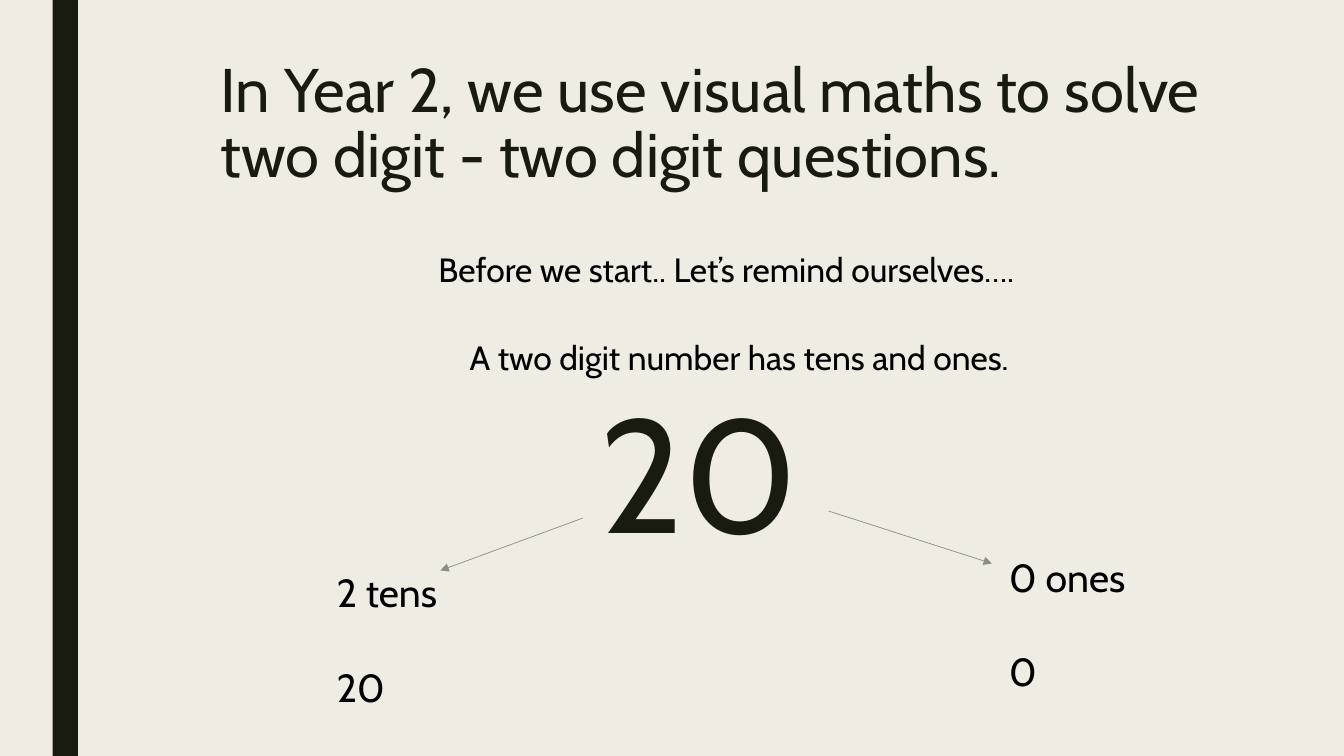
import pptx
import pptx.dml.color
import pptx.enum.shapes
import pptx.enum.text
import pptx.oxml.ns
import pptx.util
from lxml import etree

Pt = pptx.util.Pt

FONT = "Cabin"
CREAM, DARK, BLACK, GREY = "EFEDE3", "191B0E", "000000", "8C8D86"

# paragraphs, (left, top, width, height), size, colour, line spacing
TEXTS = [
    (["In Year 2, we use visual maths to solve two digit - two digit questions."],
     (150.5, 38.9, 756, 116.6), 44, DARK, 0.89),
    (["Before we start.. Let’s remind ourselves…."],
     (306, 174.2, 625, 36), 24, BLACK, 1.0),
    (["20"], (421.2, 290.2, 500, 116.6), 115, DARK, 0.79),
    (["A two digit number has tens and ones."],
     (328.3, 236.9, 625, 36), 24, BLACK, 1.0),
    (["2 tens", "20"], (233.3, 402.5, 226.8, 108.7), 28, BLACK, 1.0),
    (["0 ones", "0"], (713.5, 391.7, 226.8, 108.7), 28, BLACK, 1.0),
]
ANSWER_GAP = 33.8

# start, end
ARROWS = [
    ((416.2, 370.1), (314.6, 407.5)),
    ((591.8, 365), (708.5, 402.5)),
]
SIDE_BAR = (37.6, 0, 18, 540)


def colour(hex_code):
    return pptx.dml.color.RGBColor.from_string(hex_code)


def add_text(slide, paragraphs, place, size, ink, line_spacing):
    box = slide.shapes.add_textbox(*map(Pt, place))
    frame = box.text_frame
    frame.word_wrap = True
    frame.vertical_anchor = pptx.enum.text.MSO_ANCHOR.TOP
    frame.text = "\n".join(paragraphs)
    for index, paragraph in enumerate(frame.paragraphs):
        paragraph.line_spacing = line_spacing
        if index:
            paragraph.space_before = Pt(ANSWER_GAP)
        font = paragraph.runs[0].font
        font.name = FONT
        font.size = Pt(size)
        font.color.rgb = colour(ink)


def add_arrow(slide, start, end):
    arrow = slide.shapes.add_connector(
        pptx.enum.shapes.MSO_CONNECTOR.STRAIGHT, *map(Pt, start + end))
    arrow.line.color.rgb = colour(GREY)
    arrow.line.width = Pt(0.5)
    qn = pptx.oxml.ns.qn
    properties = arrow._element.spPr
    etree.SubElement(properties.find(qn("a:ln")), qn("a:tailEnd"), type="triangle")
    etree.SubElement(properties, qn("a:effectLst"))


def main():
    deck = pptx.Presentation()
    deck.slide_width, deck.slide_height = Pt(960), Pt(540)
    slide = deck.slides.add_slide(deck.slide_layouts[6])
    slide.background.fill.solid()
    slide.background.fill.fore_color.rgb = colour(CREAM)

    side_bar = slide.shapes.add_shape(
        pptx.enum.shapes.MSO_SHAPE.RECTANGLE, *map(Pt, SIDE_BAR))
    side_bar.shadow.inherit = False
    side_bar.fill.solid()
    side_bar.fill.fore_color.rgb = colour(DARK)
    side_bar.line.fill.background()

    for text in TEXTS:
        add_text(slide, *text)
    for start, end in ARROWS:
        add_arrow(slide, start, end)
    deck.save("out.pptx")


if __name__ == "__main__":
    main()
